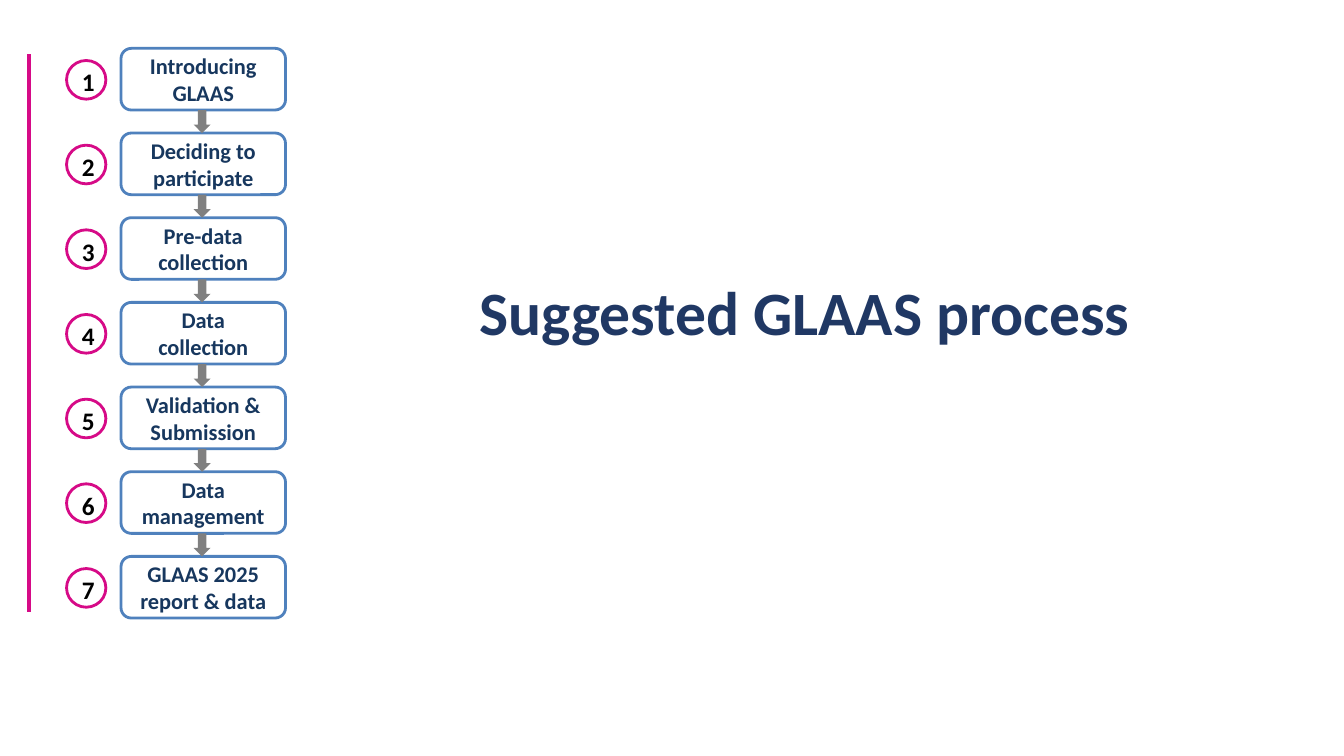
import dataclasses

import pptx
import pptx.dml.color
import pptx.enum.shapes
import pptx.enum.text
import pptx.oxml.ns
import pptx.util
from lxml import etree

SHAPES = pptx.enum.shapes.MSO_SHAPE
ALIGN = pptx.enum.text.PP_ALIGN
STEPS = [
    "Introducing GLAAS",
    "Deciding to participate",
    "Pre-data collection",
    "Data collection",
    "Validation & Submission",
    "Data management",
    "GLAAS 2025 report & data",
]
FIRST_ROW = 4
STEP_ROWS = 7


@dataclasses.dataclass(frozen=True)
class Theme:
    font: str = "Calibri"
    white: str = "FFFFFF"
    blue: str = "4F81BD"
    magenta: str = "D60A87"
    gray: str = "808080"
    step_text: str = "17375E"
    number_text: str = "000000"
    title_text: str = "203864"
    step_size: float = 16
    number_size: float = 18
    title_size: float = 44
    outline: float = 2
    rule: float = 2.25
    grid: float = 0.12


def rgb(value):
    return pptx.dml.color.RGBColor.from_string(value)


class ProcessSlide:
    def __init__(self, slide, theme):
        self.slide = slide
        self.theme = theme

    def cells(self, *counts):
        return [pptx.util.Inches(count * self.theme.grid) for count in counts]

    def apply(self, target, values):
        for name, value in values.items():
            setattr(target, name, value)

    def label(self, shape, text, size, color, margins, alignment, spacing=1.0):
        frame = shape.text_frame
        sides = ("margin_left", "margin_top", "margin_right", "margin_bottom")
        self.apply(frame, {
            "word_wrap": True,
            "vertical_anchor": pptx.enum.text.MSO_ANCHOR.MIDDLE,
            **dict(zip(sides, map(pptx.util.Inches, margins))),
        })
        paragraph = frame.paragraphs[0]
        self.apply(paragraph, {
            "text": text, "alignment": alignment, "line_spacing": spacing,
        })
        font = paragraph.runs[0].font
        self.apply(font, {
            "name": self.theme.font, "size": pptx.util.Pt(size), "bold": True,
        })
        font.color.rgb = rgb(color)

    def shape(self, kind, box, fill, line=None):
        shape = self.slide.shapes.add_shape(kind, *self.cells(*box))
        shape.shadow.inherit = False
        shape.fill.solid()
        shape.fill.fore_color.rgb = rgb(fill)
        if line:
            shape.line.color.rgb = rgb(line)
            shape.line.width = pptx.util.Pt(self.theme.outline)
        else:
            shape.line.fill.background()
        return shape

    def step(self, row, text):
        theme = self.theme
        shape = self.shape(SHAPES.ROUNDED_RECTANGLE, (10, row, 13.6, 5.1),
                           theme.white, theme.blue)
        self.label(shape, text, theme.step_size, theme.step_text,
                   (0.13, 0.05, 0.13, 0.05), ALIGN.CENTER)

    def arrow(self, row):
        self.shape(SHAPES.DOWN_ARROW, (16, row + 5.1, 1.4, 1.9), self.theme.gray)

    def number(self, row, value):
        theme = self.theme
        shape = self.shape(SHAPES.OVAL, (5.5, row + 1, 3.25, 3.2),
                           theme.white, theme.magenta)
        self.label(shape, str(value), theme.number_size, theme.number_text,
                   (0.04, 0.04, 0, 0), ALIGN.CENTER)

    def title(self, text):
        theme = self.theme
        box = self.slide.shapes.add_textbox(*self.cells(38.8, 22.2, 60.2, 7.7))
        self.label(box, text, theme.title_size, theme.title_text,
                   (0.1, 0.05, 0.1, 0.05), ALIGN.LEFT, 0.9)

    def rule(self, column, top, bottom):
        connector = self.slide.shapes.add_connector(
            pptx.enum.shapes.MSO_CONNECTOR.STRAIGHT,
            *self.cells(column, top, column, bottom))
        connector.line.color.rgb = rgb(self.theme.magenta)
        connector.line.width = pptx.util.Pt(self.theme.rule)
        etree.SubElement(connector.element.spPr,
                         pptx.oxml.ns.qn("a:effectLst"))


def main():
    presentation = pptx.Presentation()
    presentation.slide_width = pptx.util.Inches(13.33)
    presentation.slide_height = pptx.util.Inches(7.5)
    slide = presentation.slides.add_slide(presentation.slide_layouts[6])
    process = ProcessSlide(slide, Theme())
    rows = [FIRST_ROW + STEP_ROWS * index for index in range(len(STEPS))]
    for row, text in zip(rows, STEPS):
        process.step(row, text)
    for row in rows[:-1]:
        process.arrow(row)
    for value, row in enumerate(rows, start=1):
        process.number(row, value)
    process.title("Suggested GLAAS process")
    process.rule(2.4, 4.5, 50.6)
    presentation.save("out.pptx")


if __name__ == "__main__":
    main()
